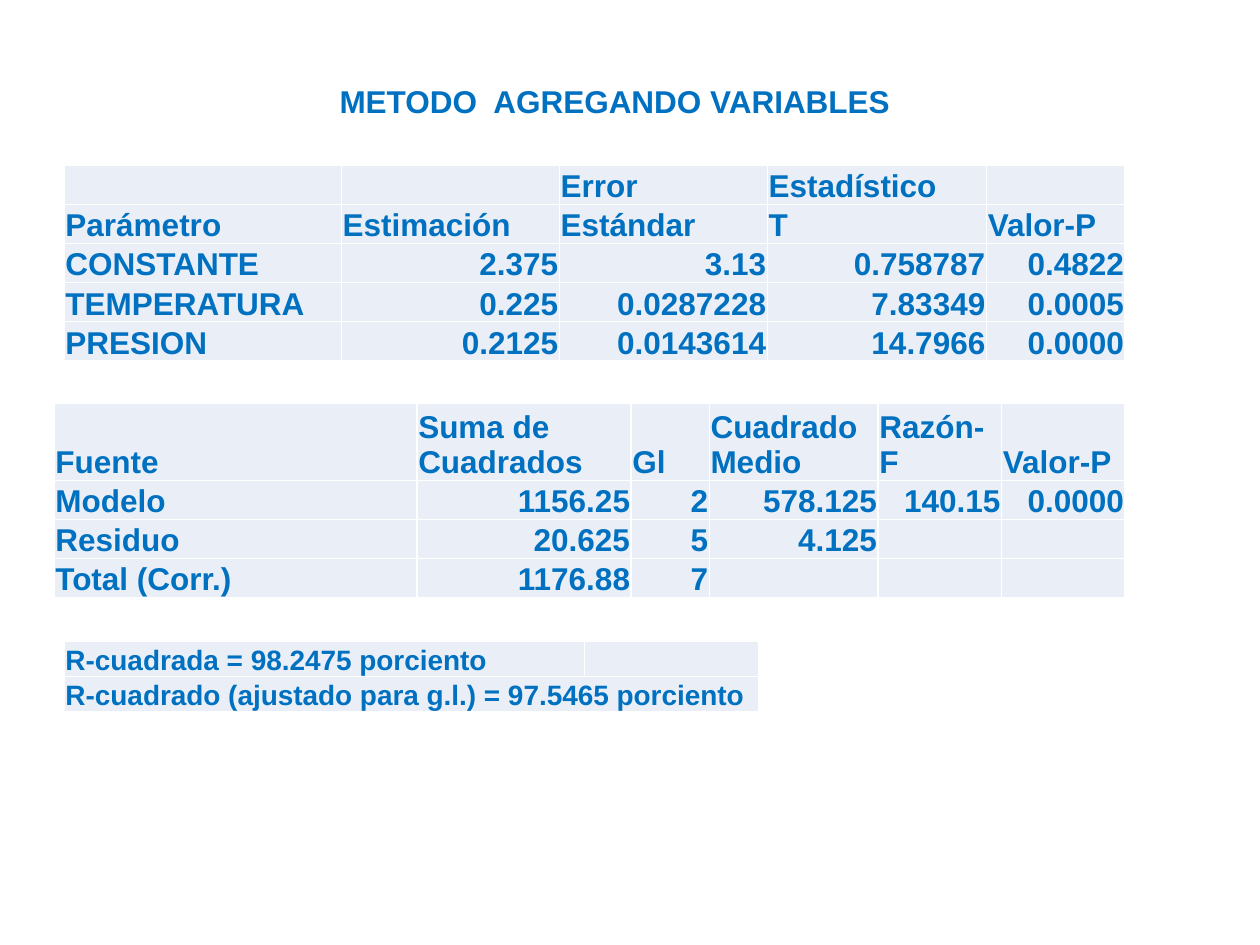
import pptx
import pptx.dml.color
import pptx.enum.text
import pptx.oxml
import pptx.oxml.ns
import pptx.util
from lxml import etree

THEME = {
    "font": "Arial",
    "text": "0070C0",
    "fill": "EAEFF7",
    "border": "FFFFFF",
    "border_pt": 1,
    "large": 18,
    "small": 16,
}

HEADING = "METODO  AGREGANDO VARIABLES"
HEADING_BOX = (5.1, 8, 87.4, 5.33)

TABLES = [
    {
        "left": 5.1, "top": 17.5, "size": "large",
        "columns": [22, 17.3, 16.5, 17.4, 11],
        "heights": [4.13] * 5,
        "header_rows": 2,
        "rows": [
            ["", "", "Error", "Estadístico", ""],
            ["Parámetro", "Estimación", "Estándar", "T", "Valor-P"],
            ["CONSTANTE", "2.375", "3.13", "0.758787", "0.4822"],
            ["TEMPERATURA", "0.225", "0.0287228", "7.83349", "0.0005"],
            ["PRESION", "0.2125", "0.0143614", "14.7966", "0.0000"],
        ],
    },
    {
        "left": 4.3, "top": 42.7, "size": "large",
        "columns": [28.8, 17, 6.2, 13.4, 9.8, 9.8],
        "heights": [8.13] + [4.13] * 3,
        "header_rows": 1,
        "rows": [
            ["Fuente", "Suma de Cuadrados", "Gl", "Cuadrado Medio", "Razón-F", "Valor-P"],
            ["Modelo", "1156.25", "2", "578.125", "140.15", "0.0000"],
            ["Residuo", "20.625", "5", "4.125", "", ""],
            ["Total (Corr.)", "1176.88", "7", "", "", ""],
        ],
    },
    {
        "left": 5.1, "top": 67.9, "size": "small",
        "columns": [41.3, 13.8],
        "heights": [3.65] * 2,
        "header_rows": 0,
        "rows": [
            ["R-cuadrada = 98.2475 porciento", ""],
            ["R-cuadrado (ajustado para g.l.) = 97.5465 porciento"],
        ],
    },
]

deck = pptx.Presentation()
deck.slide_width = pptx.util.Inches(10)
deck.slide_height = pptx.util.Inches(7.5)


def across(percent):
    return round(deck.slide_width * percent / 100)


def down(percent):
    return round(deck.slide_height * percent / 100)


def color(name):
    return pptx.dml.color.RGBColor.from_string(THEME[name])


def style_text(paragraph, size, alignment):
    paragraph.alignment = alignment
    for run in paragraph.runs:
        run.font.name = THEME["font"]
        run.font.size = pptx.util.Pt(THEME[size])
        run.font.bold = True
        run.font.color.rgb = color("text")
    if not paragraph.runs:
        end = etree.SubElement(paragraph._p, pptx.oxml.ns.qn("a:endParaRPr"))
        end.set("sz", str(THEME[size] * 100))


def add_borders(cell):
    properties = cell._tc.get_or_add_tcPr()
    width = pptx.util.Pt(THEME["border_pt"])
    for position, side in enumerate(("lnL", "lnR", "lnT", "lnB")):
        properties.insert(position, pptx.oxml.parse_xml(
            f'<a:{side} {pptx.oxml.ns.nsdecls("a")} w="{width}"><a:solidFill>'
            f'<a:srgbClr val="{THEME["border"]}"/></a:solidFill></a:{side}>'))


def style_cell(cell, size, alignment):
    cell.margin_left = cell.margin_right = cell.margin_top = pptx.util.Inches(0.01)
    cell.margin_bottom = 0
    cell.vertical_anchor = pptx.enum.text.MSO_ANCHOR.BOTTOM
    cell.fill.solid()
    cell.fill.fore_color.rgb = color("fill")
    add_borders(cell)
    style_text(cell.text_frame.paragraphs[0], size, alignment)


def add_results(slide, results):
    columns, heights = results["columns"], results["heights"]
    table = slide.shapes.add_table(
        len(heights), len(columns), across(results["left"]), down(results["top"]),
        across(sum(columns)), down(sum(heights))).table
    table.first_row = table.horz_banding = False
    for column, width in zip(table.columns, columns):
        column.width = across(width)
    for r, (texts, height) in enumerate(zip(results["rows"], heights)):
        table.rows[r].height = down(height)
        if len(texts) < len(columns):
            table.cell(r, len(texts) - 1).merge(table.cell(r, len(columns) - 1))
        for c in range(len(columns)):
            cell = table.cell(r, c)
            if c < len(texts):
                cell.text_frame.text = texts[c]
            numeric = r >= results["header_rows"] and c > 0
            align = pptx.enum.text.PP_ALIGN
            style_cell(cell, results["size"], align.RIGHT if numeric else align.LEFT)


slide = deck.slides.add_slide(deck.slide_layouts[5])
heading = slide.shapes.title
left, top, width, height = HEADING_BOX
heading.left, heading.top = across(left), down(top)
heading.width, heading.height = across(width), down(height)
heading.text_frame.text = HEADING
heading.text_frame.word_wrap = True
heading.text_frame.auto_size = pptx.enum.text.MSO_AUTO_SIZE.SHAPE_TO_FIT_TEXT
style_text(heading.text_frame.paragraphs[0], "large", pptx.enum.text.PP_ALIGN.CENTER)

for results in TABLES:
    add_results(slide, results)

deck.save("out.pptx")
